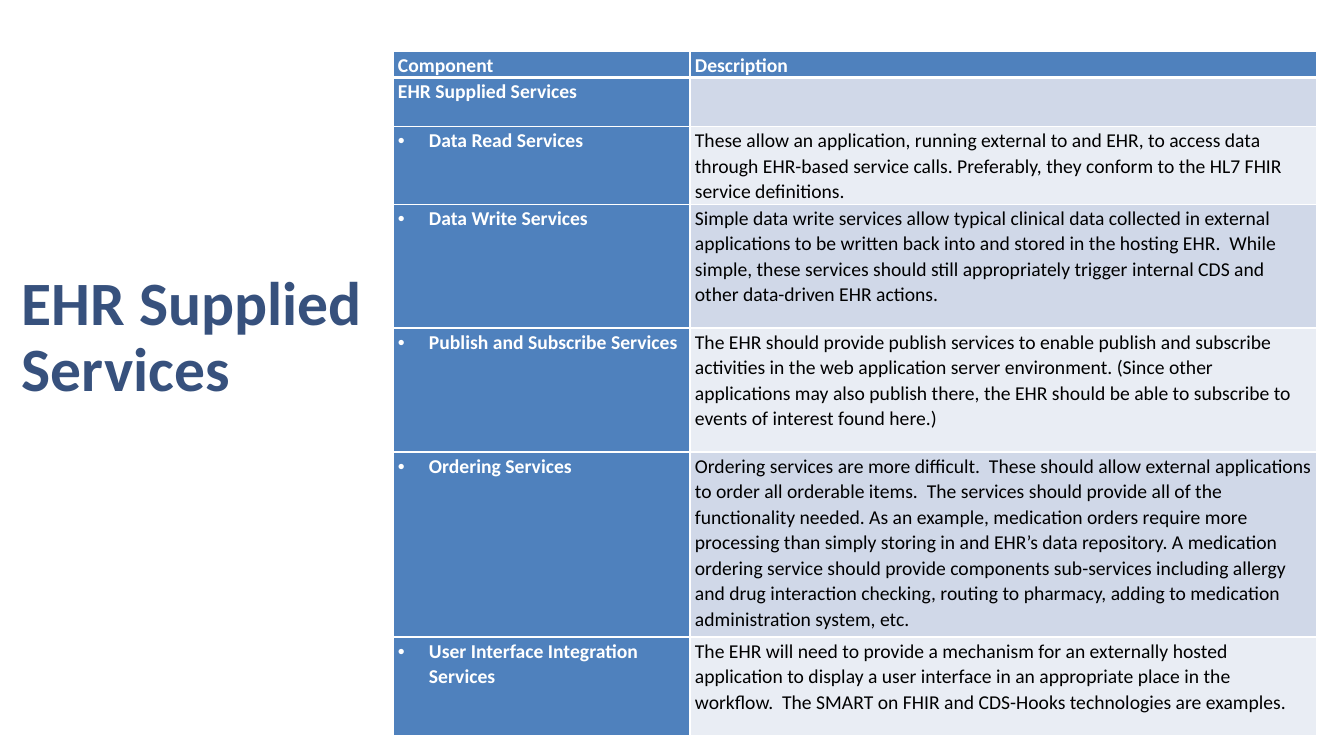
import pptx
import pptx.util
import pptx.dml.color
import pptx.enum.text
import pptx.oxml
import pptx.oxml.ns
from dataclasses import dataclass


@dataclass(frozen=True)
class Theme:
    font: str = "Calibri"
    title: str = "37517D"
    head: str = "4F81BD"
    bands: tuple = ("D0D8E8", "E9EDF4")
    white: str = "FFFFFF"
    black: str = "000000"
    big: int = 44
    small: int = 14


THEME = Theme()
SCALE = 914400 / 100.8
TITLE = "EHR Supplied Services"
HEADS = ("Component", "Description")
ROWS = [
    (49, TITLE, ""),
    (75, "Data Read Services",
     "These allow an application, running external to and EHR, to access data "
     "through EHR-based service calls. Preferably, they conform to the HL7 FHIR "
     "service definitions."),
    (124, "Data Write Services",
     "Simple data write services allow typical clinical data collected in external "
     "applications to be written back into and stored in the hosting EHR.  While "
     "simple, these services should still appropriately trigger internal CDS and "
     "other data-driven EHR actions."),
    (124, "Publish and Subscribe Services",
     "The EHR should provide publish services to enable publish and subscribe "
     "activities in the web application server environment. (Since other "
     "applications may also publish there, the EHR should be able to subscribe to "
     "events of interest found here.)"),
    (185, "Ordering Services",
     "Ordering services are more difficult.  These should allow external "
     "applications to order all orderable items.  The services should provide all of "
     "the functionality needed. As an example, medication orders require more "
     "processing than simply storing in and EHR’s data repository. A medication "
     "ordering service should provide components sub-services including allergy "
     "and drug interaction checking, routing to pharmacy, adding to medication "
     "administration system, etc."),
    (99, "User Interface Integration Services",
     "The EHR will need to provide a mechanism for an externally hosted "
     "application to display a user interface in an appropriate place in the "
     "workflow.  The SMART on FHIR and CDS-Hooks technologies are examples."),
]


def px(n):
    return pptx.util.Emu(round(n * SCALE))


def rgb(code):
    return pptx.dml.color.RGBColor.from_string(code)


def style(para, size, color, bold):
    font = para.font
    font.name = THEME.font
    font.size = pptx.util.Pt(size)
    font.bold = bold
    font.color.rgb = rgb(color)


def bullet(para, indent):
    props = para._p.get_or_add_pPr()
    props.set("marL", str(px(indent)))
    props.set("indent", str(-px(indent)))
    for tag, key, value in (("buFont", "typeface", "Arial"), ("buChar", "char", "•")):
        node = pptx.oxml.parse_xml(f'<a:{tag} {pptx.oxml.ns.nsdecls("a")} {key}="{value}"/>')
        props.append(node)


def border(cell, base):
    props = cell._tc.get_or_add_tcPr()
    for side, width in (("L", 1), ("R", 1), ("T", 1), ("B", base)):
        props.append(pptx.oxml.parse_xml(
            f'<a:ln{side} {pptx.oxml.ns.nsdecls("a")} w="{pptx.util.Pt(width)}">'
            f'<a:solidFill><a:srgbClr val="{THEME.white}"/></a:solidFill></a:ln{side}>'))


def fill_cell(cell, text, fill, color, bold, base=1, dot=False):
    border(cell, base)
    cell.fill.solid()
    cell.fill.fore_color.rgb = rgb(fill)
    cell.margin_left = cell.margin_right = px(5)
    cell.margin_top = px(1)
    cell.margin_bottom = 0
    if not text:
        return
    cell.text = text
    para = cell.text_frame.paragraphs[0]
    para.line_spacing = 1.07
    para.space_after = pptx.util.Pt(8)
    if dot:
        bullet(para, 31)
    style(para, THEME.small, color, bold)


def add_grid(slide, left, top, width, height):
    frame = slide.shapes.add_table(
        len(ROWS) + 1, 2, px(left), px(top), px(width), px(height))
    table = frame.table
    table.first_col = True
    table.horz_banding = False
    first = 297
    table.columns[0].width = px(first)
    table.columns[1].width = px(width - first)
    table.rows[0].height = px(height - sum(row[0] for row in ROWS))
    for col, text in enumerate(HEADS):
        fill_cell(table.cell(0, col), text, THEME.head, THEME.white, True, base=3)
    for num, (tall, name, about) in enumerate(ROWS, 1):
        table.rows[num].height = px(tall)
        fill_cell(table.cell(num, 0), name, THEME.head, THEME.white, True, dot=num > 1)
        fill_cell(table.cell(num, 1), about, THEME.bands[(num - 1) % 2],
                  THEME.black, False)


def add_title(slide, left, top, width, height):
    box = slide.shapes.add_textbox(px(left), px(top), px(width), px(height))
    frame = box.text_frame
    frame.word_wrap = True
    frame.vertical_anchor = pptx.enum.text.MSO_ANCHOR.BOTTOM
    para = frame.paragraphs[0]
    para.text = TITLE
    para.line_spacing = 0.9
    style(para, THEME.big, THEME.title, True)


def main():
    deck = pptx.Presentation()
    deck.slide_width = px(1344)
    deck.slide_height = px(756)
    slide = deck.slides.add_slide(deck.slide_layouts[6])
    add_grid(slide, 393, 51, 924, 681)
    add_title(slide, 12, 210, 442, 200)
    deck.save("out.pptx")


if __name__ == "__main__":
    main()
